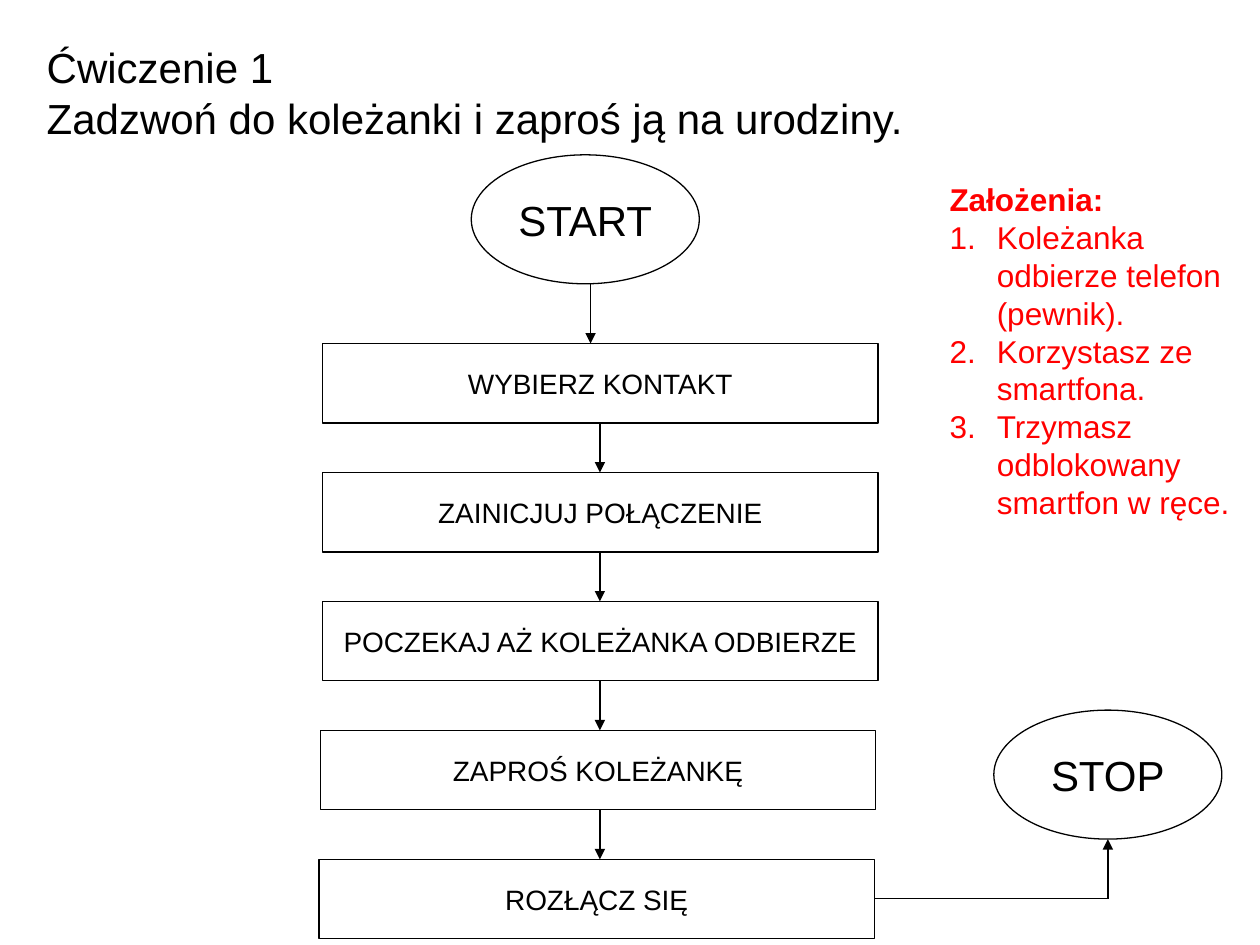
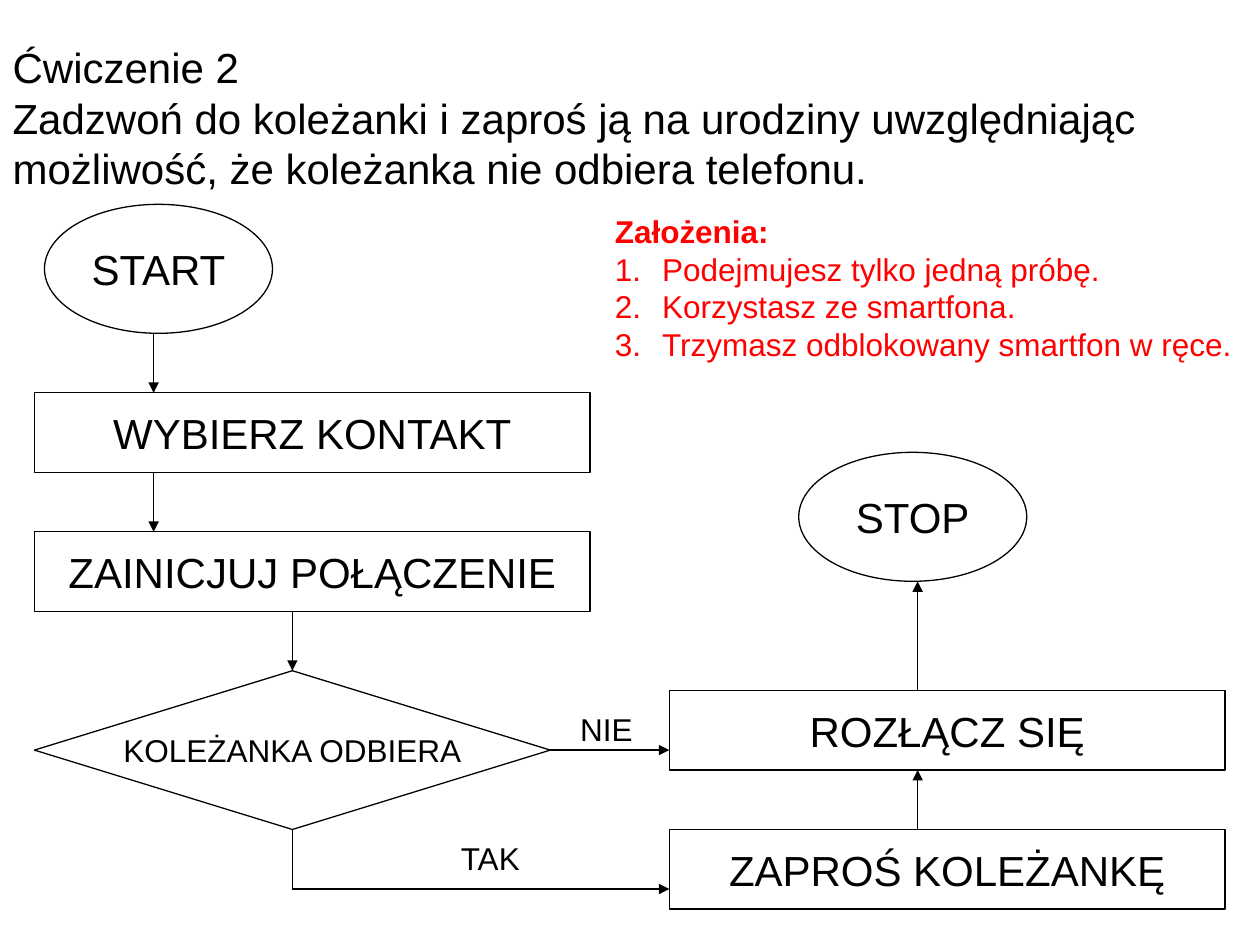
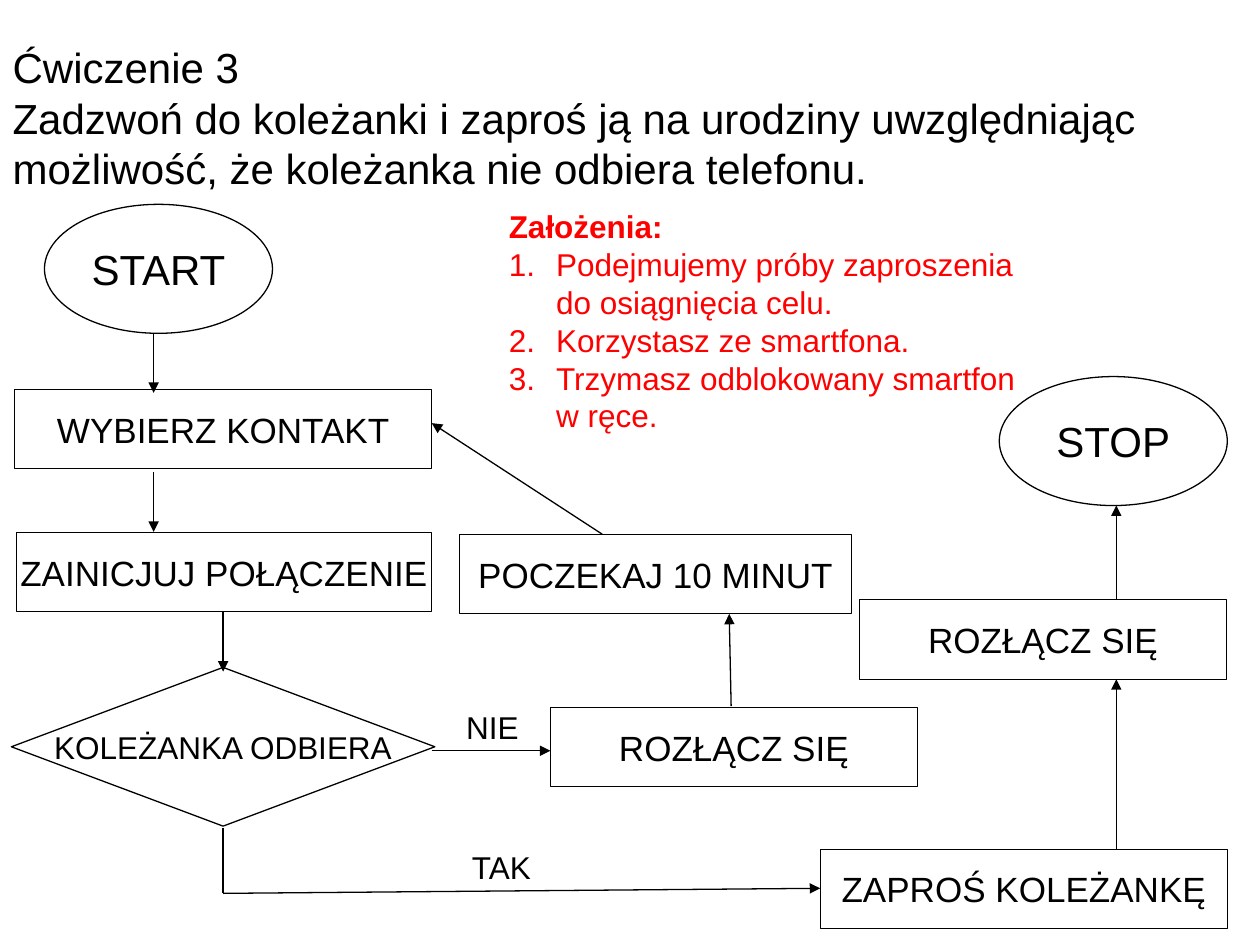
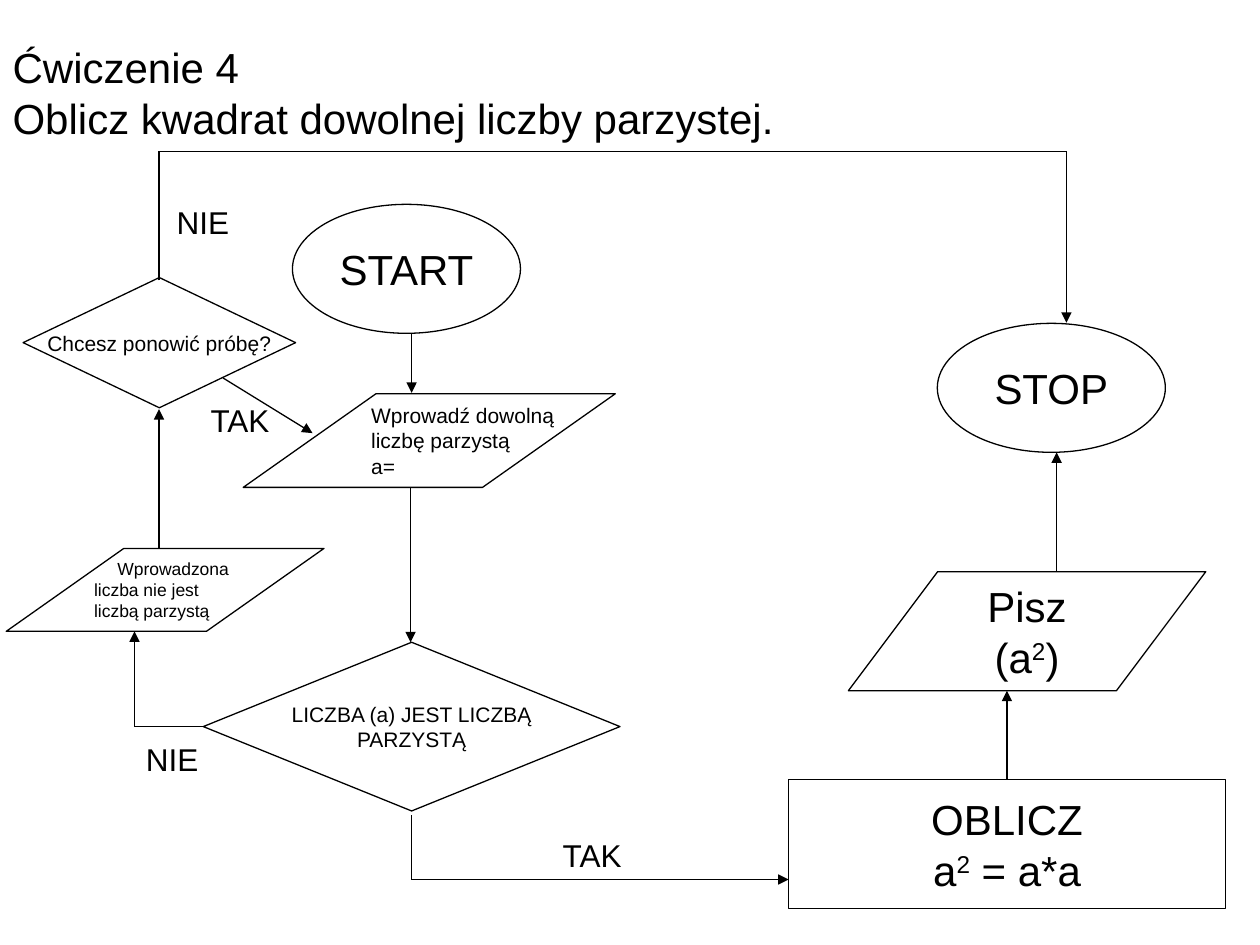
from dataclasses import dataclass
from itertools import pairwise

from lxml import etree
from pptx import Presentation
from pptx.dml.color import RGBColor
from pptx.enum.shapes import MSO_CONNECTOR, MSO_SHAPE
from pptx.enum.text import MSO_ANCHOR, MSO_AUTO_SIZE, PP_ALIGN
from pptx.oxml.ns import qn
from pptx.util import Pt

ELLIPSE = MSO_SHAPE.OVAL
RECTANGLE = MSO_SHAPE.RECTANGLE
DIAMOND = MSO_SHAPE.DIAMOND
PARALLELOGRAM = MSO_SHAPE.PARALLELOGRAM
STRAIGHT = MSO_CONNECTOR.STRAIGHT
LEFT = PP_ALIGN.LEFT
CENTER = PP_ALIGN.CENTER
TOP = MSO_ANCHOR.TOP
MIDDLE = MSO_ANCHOR.MIDDLE
NO_AUTOSIZE = MSO_AUTO_SIZE.NONE
FIT_SHAPE = MSO_AUTO_SIZE.SHAPE_TO_FIT_TEXT
TITLE_ONLY = 5

STEP_WIDTH = 317.5
STEP_HEIGHT = 45.4
TERMINAL_WIDTH = 130.3
TERMINAL_HEIGHT = 73.7

CALL_TASK = "Zadzwoń do koleżanki i zaproś ją na urodziny"
UNANSWERED_TASK = f"{CALL_TASK} uwzględniając możliwość, że koleżanka nie odbiera telefonu."
PHONE_ASSUMPTIONS = ["Korzystasz ze smartfona.", "Trzymasz odblokowany smartfon w ręce."]


@dataclass(frozen=True)
class Theme:
    font: str = "Arial"
    ink: RGBColor = RGBColor(0, 0, 0)
    paper: RGBColor = RGBColor(255, 255, 255)
    accent: RGBColor = RGBColor(255, 0, 0)
    title: int = 24
    large: int = 20
    body: int = 18
    step: int = 16
    small: int = 12
    tiny: int = 10
    line: float = 0.75
    list_indent: int = 27


class Flowchart:
    def __init__(self, presentation, theme):
        self.presentation = presentation
        self.theme = theme
        self.slide = None

    def new_slide(self, number, task, left=0, width=689, height=65.5):
        layout = self.presentation.slide_layouts[TITLE_ONLY]
        self.slide = self.presentation.slides.add_slide(layout)
        title = self.slide.shapes.title
        title.left, title.top = Pt(left), Pt(20.2)
        title.width, title.height = Pt(width), Pt(height)
        frame = title.text_frame
        frame.word_wrap = True
        frame.auto_size = NO_AUTOSIZE
        frame.vertical_anchor = TOP
        self.add_lines(frame, [f"Ćwiczenie {number}", task], self.theme.title)

    def add_lines(self, frame, lines, size, align=LEFT, color=None):
        for index, line in enumerate(lines):
            paragraph = frame.paragraphs[0] if index == 0 else frame.add_paragraph()
            paragraph.alignment = align
            for position, text in enumerate(line.split("^")):
                run = paragraph.add_run()
                run.text = text
                run.font.name = self.theme.font
                run.font.size = Pt(size)
                run.font.color.rgb = color or self.theme.ink
                if position % 2:
                    run._r.get_or_add_rPr().set("baseline", "30000")

    def node(self, kind, left, top, width, height, lines, size, align=CENTER, slant=None):
        shape = self.slide.shapes.add_shape(kind, Pt(left), Pt(top), Pt(width), Pt(height))
        shape.shadow.inherit = False
        shape.fill.solid()
        shape.fill.fore_color.rgb = self.theme.paper
        shape.line.color.rgb = self.theme.ink
        shape.line.width = Pt(self.theme.line)
        if slant is not None:
            shape.adjustments[0] = slant
        frame = shape.text_frame
        frame.word_wrap = False
        frame.vertical_anchor = MIDDLE
        self.add_lines(frame, lines, size, align)
        return shape

    def step(self, left, top, text, size, width=STEP_WIDTH):
        self.node(RECTANGLE, left, top, width, STEP_HEIGHT, [text], size)

    def terminal(self, left, top, text):
        self.node(ELLIPSE, left, top, TERMINAL_WIDTH, TERMINAL_HEIGHT, [text], self.theme.title)

    def indent(self, paragraph, margin, first_line=0):
        properties = paragraph._p.get_or_add_pPr()
        properties.set("marL", str(Pt(margin)))
        properties.set("indent", str(Pt(first_line)))
        return properties

    def text_box(self, left, top, width, height, wrap):
        box = self.slide.shapes.add_textbox(Pt(left), Pt(top), Pt(width), Pt(height))
        frame = box.text_frame
        frame.word_wrap = wrap
        frame.auto_size = FIT_SHAPE
        return frame

    def label(self, left, top, text):
        width = 49.5 if text == "TAK" else 44.6
        self.add_lines(self.text_box(left, top, width, 29, False), [text], self.theme.body)

    def assumptions(self, left, top, width, height, items):
        frame = self.text_box(left, top, width, height, True)
        self.add_lines(frame, ["Założenia:", *items], self.theme.body, color=self.theme.accent)
        heading, *entries = frame.paragraphs
        heading.runs[0].font.bold = True
        for paragraph in entries:
            properties = self.indent(paragraph, self.theme.list_indent, -self.theme.list_indent)
            etree.SubElement(properties, qn("a:buAutoNum"), type="arabicPeriod")

    def arrow(self, *points):
        for start, end in pairwise(points):
            connector = self.slide.shapes.add_connector(STRAIGHT, *map(Pt, (*start, *end)))
            connector.line.color.rgb = self.theme.ink
            connector.line.width = Pt(self.theme.line)
            properties = connector._element.spPr
            if end is points[-1]:
                line = properties.find(qn("a:ln"))
                etree.SubElement(line, qn("a:tailEnd"), type="triangle")
            etree.SubElement(properties, qn("a:effectLst"))


def build_simple_call(chart):
    theme = chart.theme
    chart.new_slide(1, f"{CALL_TASK}.", left=19.5, width=512)
    chart.terminal(269.3, 88.5, "START")
    chart.arrow((337.5, 162), (337.5, 196.3))
    first_top, pitch, axis = 196.3, 73.7, 342.8
    steps = [
        (184.3, "WYBIERZ KONTAKT"),
        (184.3, "ZAINICJUJ POŁĄCZENIE"),
        (184.3, "POCZEKAJ AŻ KOLEŻANKA ODBIERZE"),
        (183, "ZAPROŚ KOLEŻANKĘ"),
        (182.2, "ROZŁĄCZ SIĘ"),
    ]
    for index, (left, text) in enumerate(steps):
        top = first_top + index * pitch
        if index:
            chart.arrow((axis, top - pitch + STEP_HEIGHT), (axis, top))
        chart.step(left, top, text, theme.step)
    chart.terminal(567.9, 405.8, "STOP")
    chart.arrow((499.7, 513.5), (633.1, 513.5), (633.1, 479.5))
    chart.assumptions(535.5, 99.5, 176, 204,
                      ["Koleżanka odbierze telefon (pewnik).", *PHONE_ASSUMPTIONS])


def build_single_attempt(chart):
    theme = chart.theme
    chart.new_slide(2, UNANSWERED_TASK, height=94.5)
    chart.terminal(25.4, 116.8, "START")
    chart.step(19.7, 224.5, "WYBIERZ KONTAKT", theme.title)
    chart.step(19.7, 303.9, "ZAINICJUJ POŁĄCZENIE", theme.title)
    chart.node(DIAMOND, 19.7, 383.3, 294.8, 90.7, ["KOLEŻANKA ODBIERA"], theme.body)
    chart.step(382.5, 474, "ZAPROŚ KOLEŻANKĘ", theme.title)
    chart.step(382.5, 394.6, "ROZŁĄCZ SIĘ", theme.title)
    chart.terminal(456.4, 258.5, "STOP")
    chart.arrow((87.8, 190.5), (87.8, 224.5))
    chart.arrow((87.8, 269.9), (87.8, 303.9))
    chart.arrow((167.1, 349.3), (167.1, 383.3))
    chart.arrow((314.5, 428.6), (382.5, 428.6))
    chart.arrow((167.1, 474), (167.1, 508), (382.5, 508))
    chart.arrow((524.4, 474), (524.4, 440))
    chart.arrow((524.4, 394.6), (524.4, 332.2))
    chart.label(256.3, 476, "TAK")
    chart.label(324.4, 402, "NIE")
    chart.assumptions(344.3, 117.5, 374.4, 94.5,
                      ["Podejmujesz tylko jedną próbę.", *PHONE_ASSUMPTIONS])


def build_repeated_attempts(chart):
    theme = chart.theme
    chart.new_slide(3, UNANSWERED_TASK, height=94.5)
    chart.terminal(25.4, 116.8, "START")
    chart.step(8.3, 222.5, "WYBIERZ KONTAKT", theme.large, 238.5)
    chart.step(9.4, 304.2, "ZAINICJUJ POŁĄCZENIE", theme.large, 237.2)
    chart.node(DIAMOND, 6.5, 381.4, 242, 90.7, ["KOLEŻANKA ODBIERA"], theme.body)
    chart.step(262.6, 305.4, "POCZEKAJ 10 MINUT", theme.large, 224)
    chart.step(314.5, 404.2, "ROZŁĄCZ SIĘ", theme.large, 209.8)
    chart.step(468.7, 485.3, "ZAPROŚ KOLEŻANKĘ", theme.large, 232.7)
    chart.step(491.1, 342.8, "ROZŁĄCZ SIĘ", theme.large, 209.8)
    chart.terminal(571, 215.2, "STOP")
    chart.arrow((87.8, 190.5), (87.8, 224.5))
    chart.arrow((87.8, 269.9), (87.8, 303.9))
    chart.arrow((127.5, 349.8), (127.5, 383.8))
    chart.arrow((246.7, 429), (314.5, 429))
    chart.arrow((417.8, 403.5), (416.7, 350.8))
    chart.arrow((344.2, 305.3), (246.7, 241.8))
    chart.arrow((127.5, 473), (127.5, 510.5), (468.7, 507.6))
    chart.arrow((637.9, 485.3), (637.9, 388.2))
    chart.arrow((637.9, 342.8), (637.9, 288.9))
    chart.label(259.3, 401, "NIE")
    chart.label(262.6, 481, "TAK")
    chart.assumptions(283.7, 115, 311.8, 138.2,
                      ["Podejmujemy próby zaproszenia do osiągnięcia celu.", *PHONE_ASSUMPTIONS])


def build_even_square(chart):
    theme = chart.theme
    chart.new_slide(4, "Oblicz kwadrat dowolnej liczby parzystej.")
    chart.terminal(167.1, 116.8, "START")
    chart.terminal(535.6, 184.8, "STOP")
    prompt = chart.node(PARALLELOGRAM, 139, 225, 212.6, 53.5,
                        ["Wprowadź dowolną", "liczbę parzystą", "a="],
                        theme.small, LEFT, 1.418)
    for paragraph in prompt.text_frame.paragraphs:
        chart.indent(paragraph, 16.7)
    chart.node(DIAMOND, 116.2, 367, 238.1, 96.4,
               ["LICZBA (a) JEST LICZBĄ", "PARZYSTĄ"], theme.small)
    chart.node(RECTANGLE, 450.6, 445.6, 249.8, 73.7, ["OBLICZ", "a^2^ = a*a"], theme.title)
    chart.node(PARALLELOGRAM, 484.8, 326.7, 204.2, 68, ["Pisz", "(a^2^)"],
               theme.title, slant=0.75)
    warning = chart.node(PARALLELOGRAM, 3.6, 313.4, 181.6, 47.4,
                         ["Wprowadzona", "liczba nie jest", "liczbą parzystą"],
                         theme.tiny, LEFT, 1.418)
    chart.indent(warning.text_frame.paragraphs[0], 0, 13.3)
    chart.node(DIAMOND, 13.2, 158.6, 155.7, 74.4, ["Chcesz ponowić próbę?"], theme.small)
    chart.arrow((235.2, 190.5), (235.2, 224.5))
    chart.arrow((234.6, 278.5), (234.6, 367))
    chart.arrow((235.2, 465.8), (235.2, 502.6), (450.6, 502.6))
    chart.arrow((116.2, 415.2), (76.9, 415.2), (76.9, 360.8))
    chart.arrow((90.9, 313.4), (90.9, 233.8))
    chart.arrow((575.4, 445.6), (575.4, 394.7))
    chart.arrow((603.8, 326.7), (603.8, 258.5))
    chart.arrow((90.9, 160.2), (90.9, 86.4), (609.4, 86.4), (609.4, 184.4))
    chart.arrow((127.5, 216), (178.6, 247.5))
    chart.label(314.5, 474, "TAK")
    chart.label(76.3, 419.3, "NIE")
    chart.label(93.8, 112.3, "NIE")
    chart.label(113.3, 225.6, "TAK")


def main():
    presentation = Presentation()
    presentation.slide_width, presentation.slide_height = Pt(720), Pt(540)
    chart = Flowchart(presentation, Theme())
    build_simple_call(chart)
    build_single_attempt(chart)
    build_repeated_attempts(chart)
    build_even_square(chart)
    presentation.save("out.pptx")


if __name__ == "__main__":
    main()
